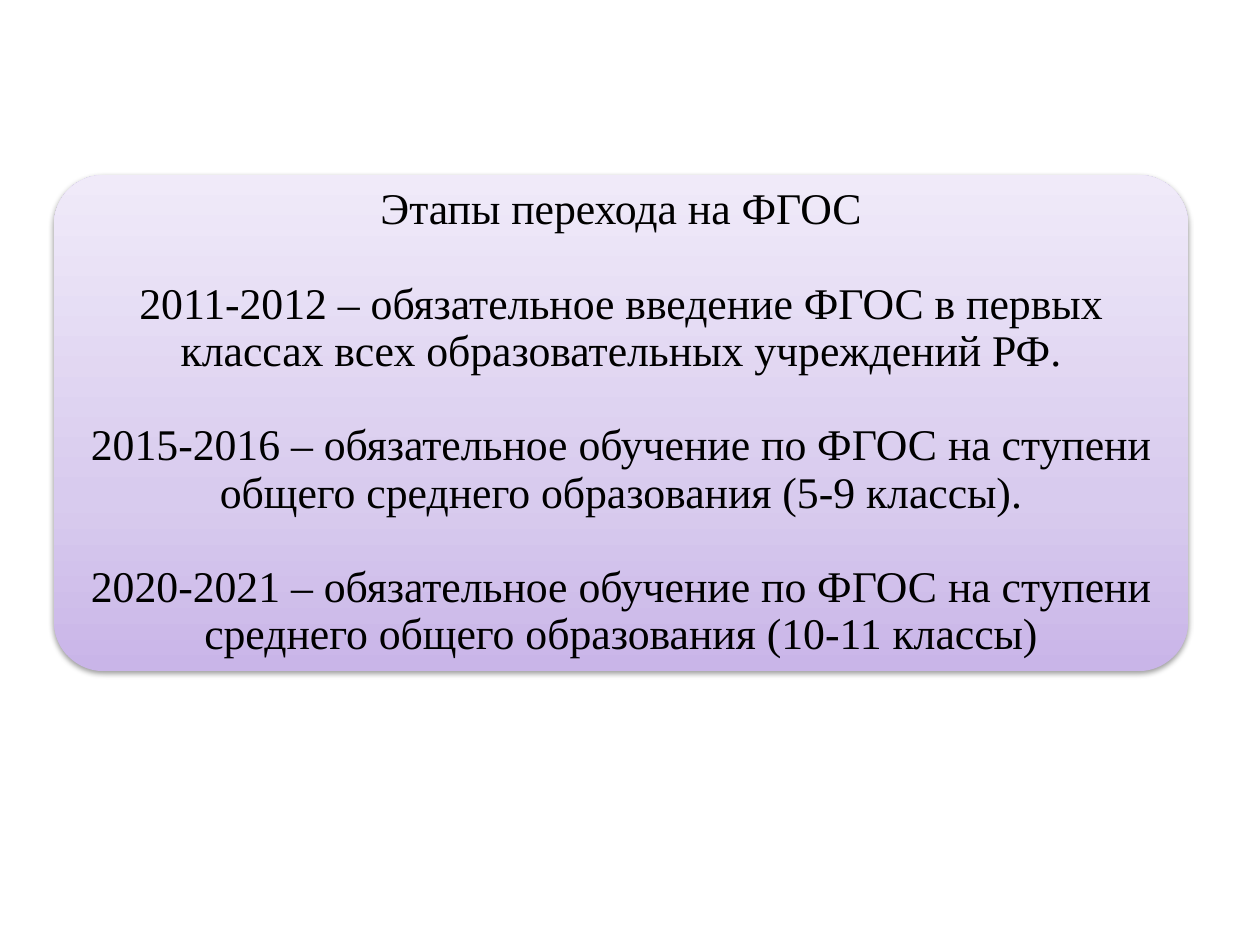
import pptx
import pptx.dml.color
import pptx.enum.shapes
import pptx.enum.text
import pptx.oxml
import pptx.oxml.ns
import pptx.util

Cm = pptx.util.Cm
Pt = pptx.util.Pt
COLORS = {"low": "C9B5E8", "mid": "D8CBEE", "high": "F0EAF9", "text": "000000", "shade": "000000"}
STAGES = [
    "Этапы перехода на ФГОС",
    "2011-2012 – обязательное введение ФГОС в первых классах всех образовательных учреждений РФ.",
    "2015-2016 – обязательное обучение по ФГОС на ступени общего среднего образования (5-9 классы).",
    "2020-2021 – обязательное обучение по ФГОС на ступени среднего общего образования (10-11 классы)",
]


def paint(card):
    """Give the card its three-stop gradient and soft shadow."""
    space = pptx.oxml.ns.nsdecls("a")
    stops = "".join(
        f'<a:gs pos="{place * 1000}"><a:srgbClr val="{COLORS[name]}"/></a:gs>'
        for place, name in ((0, "low"), (35, "mid"), (100, "high"))
    )
    fill = pptx.oxml.parse_xml(
        f'<a:gradFill {space} rotWithShape="1"><a:gsLst>{stops}</a:gsLst>'
        '<a:lin ang="16200000" scaled="0"/></a:gradFill>'
    )
    shade = pptx.oxml.parse_xml(
        f'<a:effectLst {space}><a:outerShdw blurRad="{Pt(3.1)}" dist="{Pt(1.6)}" '
        f'dir="5400000" rotWithShape="0"><a:srgbClr val="{COLORS["shade"]}">'
        '<a:alpha val="38000"/></a:srgbClr></a:outerShdw></a:effectLst>'
    )
    card.line.fill.background()
    card.shadow.inherit = False
    props = card.element.spPr
    props.find(pptx.oxml.ns.qn("a:prstGeom")).addnext(fill)
    props.replace(props.find(pptx.oxml.ns.qn("a:effectLst")), shade)


def add_card(slide, left, top, width, height):
    """Place the rounded card with the stages of the transition."""
    kind = pptx.enum.shapes.MSO_SHAPE.ROUNDED_RECTANGLE
    card = slide.shapes.add_shape(kind, Cm(left), Cm(top), Cm(width), Cm(height))
    card.adjustments[0] = 0.1
    paint(card)
    frame = card.text_frame
    frame.word_wrap = True
    frame.vertical_anchor = pptx.enum.text.MSO_ANCHOR.MIDDLE
    frame.margin_left = frame.margin_right = Cm(0.43)
    frame.margin_top = frame.margin_bottom = Cm(0.3)
    for index, stage in enumerate(STAGES):
        para = frame.add_paragraph() if index else frame.paragraphs[0]
        para.text = stage
        para.alignment = pptx.enum.text.PP_ALIGN.CENTER
        para.line_spacing = 0.9
        if index:
            para.space_before = Pt(27)
        para.font.name = "Times New Roman"
        para.font.size = Pt(25)
        para.font.color.rgb = pptx.dml.color.RGBColor.from_string(COLORS["text"])


def main():
    """Build and save the slide."""
    deck = pptx.Presentation()
    deck.slide_width, deck.slide_height = Cm(25.4), Cm(19.05)
    slide = deck.slides.add_slide(deck.slide_layouts[6])
    add_card(slide, 1.09, 3.53, 22.86, 10)
    deck.save("out.pptx")


if __name__ == "__main__":
    main()
